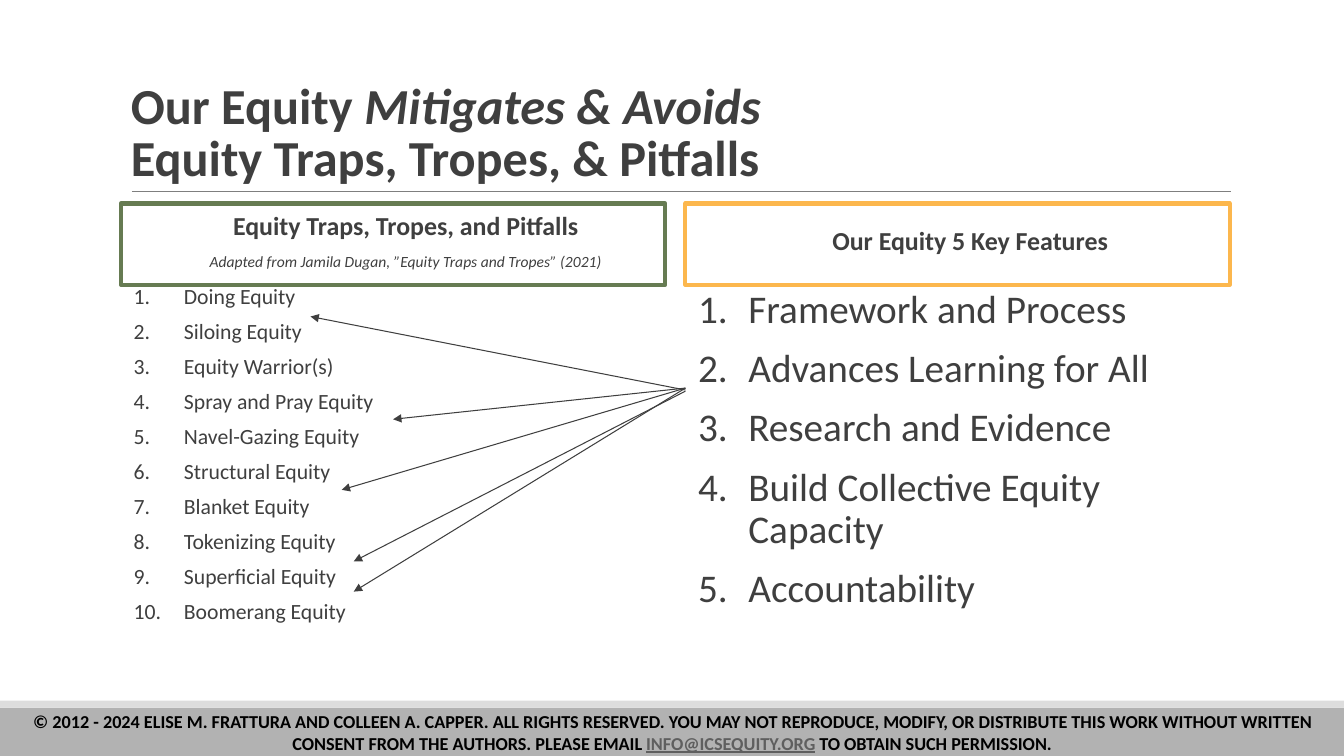
"""Slide linking equity traps, tropes and pitfalls to five key features."""
from lxml import etree
from pptx import Presentation
from pptx import util as u
from pptx.dml.color import RGBColor
from pptx.enum import shapes, text
from pptx.oxml.ns import qn

INK, BLACK, LINK = "3F3F3F", "000000", "5F5F5F"
FONT = "Calibri"
W, H = 960, 540
COL_W, HEAD_TOP, HEAD_H, LIST_H = 388.8, 145.4, 58, 265.7
FOOT_TOP = 505.4

TITLE = [("Our Equity ", {}), ("Mitigates & Avoids", {"italic": True}),
         ("\v", {}), ("Equity Traps, Tropes, & Pitfalls", {})]
FOOTER = [
    ("© 2012 - 2024 ELISE M. FRATTURA AND COLLEEN A. CAPPER. ALL RIGHTS RESERVED. "
     "YOU MAY NOT REPRODUCE, MODIFY, OR DISTRIBUTE THIS WORK WITHOUT WRITTEN "
     "CONSENT FROM THE AUTHORS. PLEASE EMAIL ", {}),
    ("INFO@ICSEQUITY.ORG", {"color": LINK, "underline": True}),
    (" TO OBTAIN SUCH PERMISSION.", {}),
]
COLUMNS = [
    {"left": 86.4, "border": "667B52", "size": 15.5, "spacing": 0.7,
     "head": [("Equity Traps, Tropes, and Pitfalls", {}),
              ("Adapted from Jamila Dugan, ”Equity Traps and Tropes” (2021)",
               {"size": 11.1, "bold": False, "italic": True})],
     "items": ["Doing Equity", "Siloing Equity", "Equity Warrior(s)",
               "Spray and Pray Equity", "Navel-Gazing Equity", "Structural Equity",
               "Blanket Equity", "Tokenizing Equity", "Superficial Equity",
               "Boomerang Equity"]},
    {"left": 489.6, "border": "FCB74D", "size": 28, "spacing": 0.9,
     "head": [("Our Equity 5 Key Features", {})],
     "items": ["Framework and Process", "Advances Learning for All",
               "Research and Evidence", "Build Collective Equity Capacity",
               "Accountability"]},
]
ARROW_X = 489.6
ARROWS = [(277.2, (280.8, 299.5)), (277.2, (244.1, 349.9)), (277.2, (252.7, 422.6)),
          (278.6, (221.8, 226.1)), (279.4, (252.7, 401))]


def rgb(hex_color):
    return RGBColor.from_string(hex_color)


def style(font, size, color=INK, bold=False, italic=False, underline=False):
    font.name, font.size, font.color.rgb = FONT, u.Pt(size), rgb(color)
    font.bold, font.italic, font.underline = bold, italic, underline


def add_runs(p, runs, **base):
    for words, changes in runs:
        if words == "\v":
            p.add_line_break()
        else:
            r = p.add_run()
            r.text = words
            style(r.font, **{**base, **changes})


def setup(sp, anchor, side, top):
    tf = sp.text_frame
    tf.word_wrap = True
    tf.vertical_anchor = anchor
    tf.margin_left = tf.margin_right = u.Pt(side)
    tf.margin_top = tf.margin_bottom = u.Pt(top)
    return tf


def add_box(s, left, top, width, height, fill=None, border=None):
    sp = s.shapes.add_shape(shapes.MSO_SHAPE.RECTANGLE, *map(u.Pt, (left, top, width, height)))
    sp.shadow.inherit = False
    if fill:
        sp.fill.solid()
        sp.fill.fore_color.rgb = rgb(fill)
    else:
        sp.fill.background()
    if border:
        sp.line.color.rgb, sp.line.width = rgb(border), u.Pt(3)
    else:
        sp.line.fill.background()
    return sp


def add_text(s, left, top, width, height, anchor, side, inset):
    sp = s.shapes.add_textbox(*map(u.Pt, (left, top, width, height)))
    return setup(sp, anchor, side, inset)


def add_line(s, start, end, color, arrow=False):
    c = s.shapes.add_connector(shapes.MSO_CONNECTOR.STRAIGHT, *map(u.Pt, start + end))
    c.line.color.rgb, c.line.width = rgb(color), u.Pt(0.75)
    if arrow:
        etree.SubElement(c.line._get_or_add_ln(), qn("a:tailEnd"), type="triangle")
    etree.SubElement(c._element.spPr, qn("a:effectLst"))


def paragraphs(tf, count, spacing, margin, indent):
    for i in range(count):
        p = tf.add_paragraph() if i else tf.paragraphs[0]
        pPr = p._p.get_or_add_pPr()
        pPr.set("marL", str(u.Pt(margin)))
        pPr.set("indent", str(u.Pt(indent)))
        p.line_spacing = spacing
        if i:
            p.space_before = u.Pt(12)
        yield p


def add_number(p):
    pPr = p._p.get_or_add_pPr()
    color = etree.SubElement(pPr, qn("a:buClr"))
    etree.SubElement(color, qn("a:srgbClr"), val=INK)
    etree.SubElement(pPr, qn("a:buFont"), typeface=FONT)
    etree.SubElement(pPr, qn("a:buAutoNum"), type="arabicPeriod")


def add_column(s, col):
    anchor = text.MSO_ANCHOR
    head = add_box(s, col["left"], HEAD_TOP, COL_W, HEAD_H, border=col["border"])
    tf = setup(head, anchor.MIDDLE, 7.2, 3.6)
    for p, run in zip(paragraphs(tf, len(col["head"]), 0.7, 36, -18), col["head"]):
        p.alignment = text.PP_ALIGN.CENTER
        add_runs(p, [run], size=18.5, bold=True)
    tf = add_text(s, col["left"], HEAD_TOP + HEAD_H, COL_W, LIST_H, anchor.TOP, 0, 3.6)
    items = col["items"]
    for p, item in zip(paragraphs(tf, len(items), col["spacing"], 45, -36), items):
        add_number(p)
        add_runs(p, [(item, {})], size=col["size"])


def main():
    prs = Presentation()
    prs.slide_width, prs.slide_height = u.Pt(W), u.Pt(H)
    s = prs.slides.add_slide(prs.slide_layouts[6])

    add_box(s, 0, FOOT_TOP, W, H - FOOT_TOP, fill="B2B2B2")
    add_box(s, 0, FOOT_TOP - 5, W, 5, fill="DDDDDD")
    add_line(s, (94.3, 136.8), (879.1, 136.8), "7F7F7F")
    tf = add_text(s, 0, FOOT_TOP, W, H - FOOT_TOP, text.MSO_ANCHOR.MIDDLE, 7.2, 7.2)
    tf.paragraphs[0].alignment = text.PP_ALIGN.CENTER
    add_runs(tf.paragraphs[0], FOOTER, size=13, color=BLACK, bold=True)

    for col in COLUMNS:
        add_column(s, col)

    tf = add_text(s, 86.4, 22.3, 575.3, 114.5, text.MSO_ANCHOR.BOTTOM, 7.2, 3.6)
    tf.paragraphs[0].line_spacing = 0.85
    add_runs(tf.paragraphs[0], TITLE, size=36, bold=True)

    for y, end in ARROWS:
        add_line(s, (ARROW_X, y), end, INK, arrow=True)
    prs.save("out.pptx")


if __name__ == "__main__":
    main()
